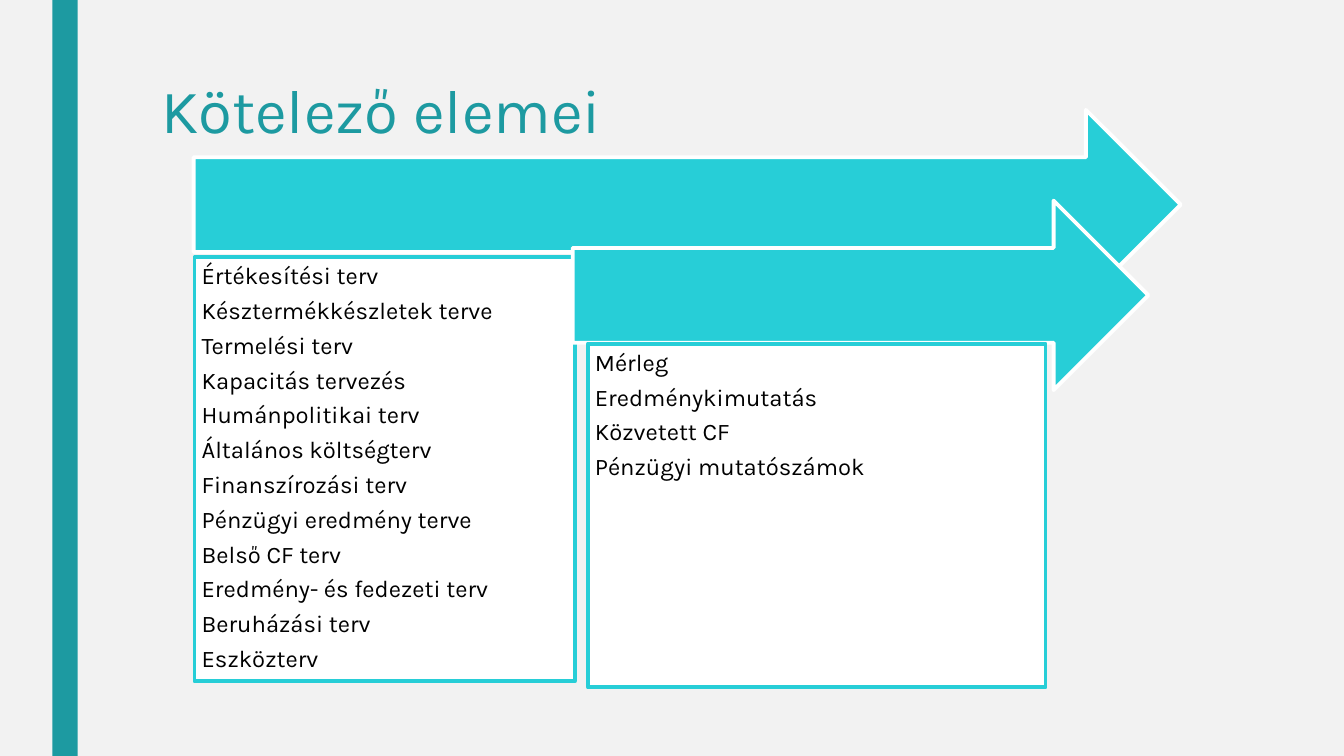
from pptx import Presentation
from pptx.dml.color import RGBColor
from pptx.enum.shapes import MSO_SHAPE
from pptx.enum.text import MSO_ANCHOR, PP_ALIGN
from pptx.util import Inches, Pt

RECTANGLE = MSO_SHAPE.RECTANGLE
RIGHT_ARROW = MSO_SHAPE.RIGHT_ARROW
TOP = MSO_ANCHOR.TOP
LEFT = PP_ALIGN.LEFT

OPERATING_PLANS = [
    "Értékesítési terv",
    "Késztermékkészletek terve",
    "Termelési terv",
    "Kapacitás tervezés",
    "Humánpolitikai terv",
    "Általános költségterv",
    "Finanszírozási terv",
    "Pénzügyi eredmény terve",
    "Belső CF terv",
    "Eredmény- és fedezeti terv",
    "Beruházási terv",
    "Eszközterv",
]
FINANCIAL_STATEMENTS = [
    "Mérleg",
    "Eredménykimutatás",
    "Közvetett CF",
    "Pénzügyi mutatószámok",
]


def color(hex_value):
    return RGBColor.from_string(hex_value)


class PlanSlide:
    FONT = "Karla"
    BACKGROUND = "F2F2F2"
    TEAL = "1D9AA1"
    CYAN = "27CED7"
    WHITE = "FFFFFF"
    BLACK = "000000"
    OUTLINE = 2.75

    def __init__(self, presentation):
        self.slide = presentation.slides.add_slide(presentation.slide_layouts[6])
        background = self.slide.background.fill
        background.solid()
        background.fore_color.rgb = color(self.BACKGROUND)

    def shape(self, kind, box, fill, outline=None):
        shape = self.slide.shapes.add_shape(kind, *map(Inches, box))
        shape.shadow.inherit = False
        shape.fill.solid()
        shape.fill.fore_color.rgb = color(fill)
        if outline:
            shape.line.color.rgb = color(outline)
            shape.line.width = Pt(self.OUTLINE)
        else:
            shape.line.fill.background()
        return shape

    def set_lines(self, frame, lines, size, text_color, line_spacing, space_after=0):
        frame.word_wrap = True
        frame.vertical_anchor = TOP
        for index, line in enumerate(lines):
            paragraph = frame.paragraphs[0] if index == 0 else frame.add_paragraph()
            paragraph.text = line
            paragraph.alignment = LEFT
            paragraph.line_spacing = line_spacing
            paragraph.space_after = Pt(space_after)
            paragraph.font.name = self.FONT
            paragraph.font.size = Pt(size)
            paragraph.font.color.rgb = color(text_color)

    def side_band(self, box):
        self.shape(RECTANGLE, box, self.TEAL)

    def title(self, text, box):
        heading = self.slide.shapes.add_textbox(*map(Inches, box))
        self.set_lines(heading.text_frame, [text], 44, self.TEAL, 0.89)

    def arrow(self, box):
        self.shape(RIGHT_ARROW, box, self.CYAN, self.WHITE)

    def plan_list(self, items, box):
        panel = self.shape(RECTANGLE, box, self.WHITE, self.CYAN)
        frame = panel.text_frame
        frame.margin_left = frame.margin_right = Inches(0.07)
        frame.margin_top = frame.margin_bottom = Inches(0.07)
        self.set_lines(frame, items, 17, self.BLACK, 0.9, 6.5)


def main():
    presentation = Presentation()
    presentation.slide_width = Inches(13.33)
    presentation.slide_height = Inches(7.5)
    plan = PlanSlide(presentation)

    # Side band and title
    plan.side_band((0.52, 0, 0.25, 7.5))
    plan.title("Kötelező elemei", (1.5, 0.75, 10.5, 1.62))

    # Operating plans
    plan.arrow((1.92, 1.09, 9.79, 1.88))
    plan.plan_list(OPERATING_PLANS, (1.93, 2.55, 3.77, 4.21))

    # Financial statements, overlapping the first arrow
    plan.arrow((5.68, 1.99, 5.71, 1.88))
    plan.plan_list(FINANCIAL_STATEMENTS, (5.83, 3.41, 4.54, 3.41))

    presentation.save("out.pptx")


if __name__ == "__main__":
    main()
